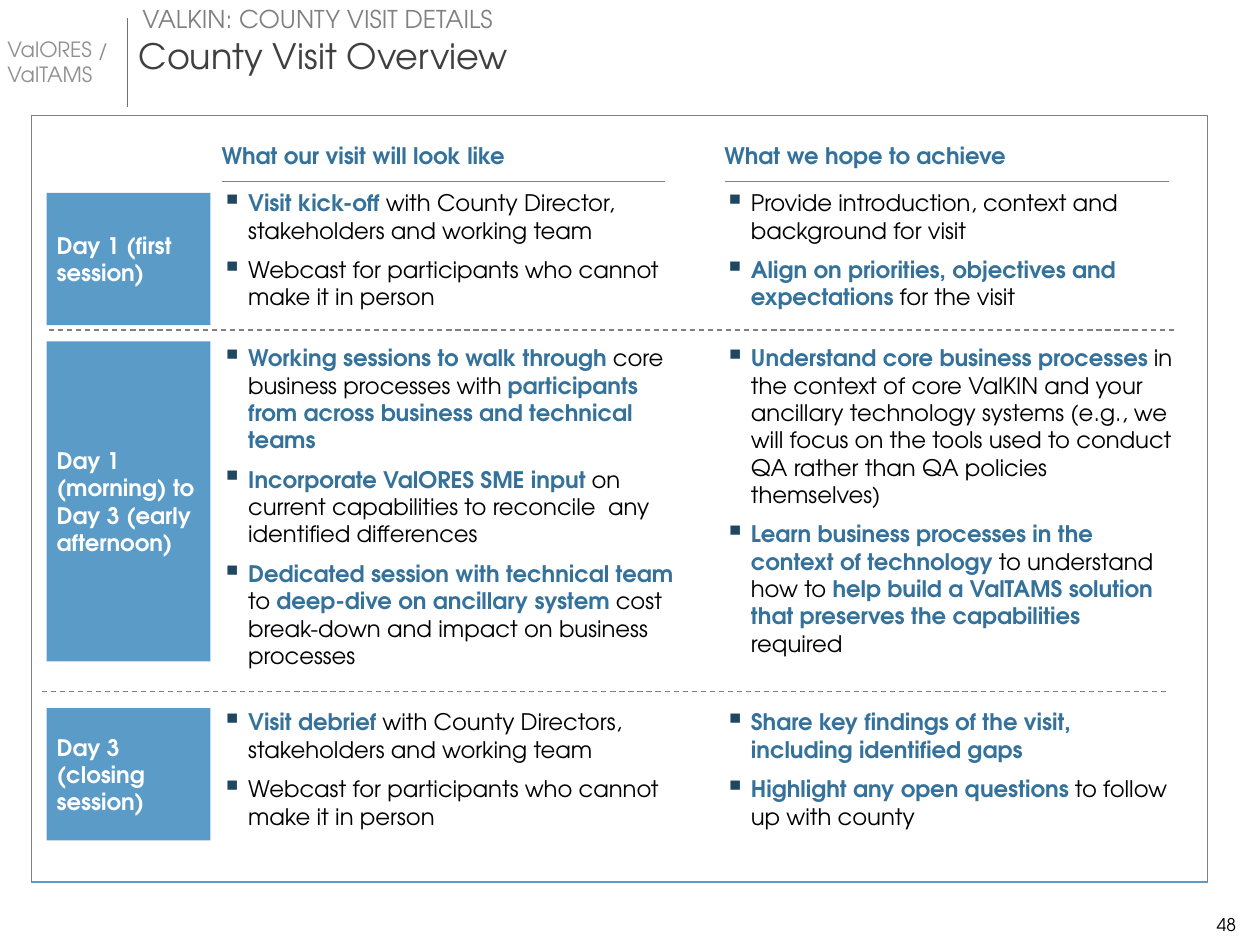
from lxml import etree
from pptx import Presentation
from pptx.dml.color import RGBColor
from pptx.enum.dml import MSO_LINE
from pptx.enum.shapes import MSO_CONNECTOR, MSO_SHAPE
from pptx.enum.text import MSO_ANCHOR, PP_ALIGN
from pptx.oxml.ns import qn
from pptx.util import Inches, Pt

STRAIGHT = MSO_CONNECTOR.STRAIGHT
RECTANGLE = MSO_SHAPE.RECTANGLE
DASH = MSO_LINE.DASH
TOP, MIDDLE, BOTTOM = MSO_ANCHOR.TOP, MSO_ANCHOR.MIDDLE, MSO_ANCHOR.BOTTOM
LEFT, RIGHT = PP_ALIGN.LEFT, PP_ALIGN.RIGHT

FONT = "TeX Gyre Adventor"
BLACK, WHITE, GREY = "000000", "FFFFFF", "808080"
BLUE, ACCENT, BULLET = "5B9BC8", "35729B", "204762"

LABEL_LEFT, LABEL_WIDTH = 0.37, 1.3
COLUMNS = [
    # heading, left, heading width, rule width
    ("What our visit will look like", 1.76, 3.74, 3.52),
    ("What we hope to achieve", 5.75, 3.53, 3.53),
]

# Phrases between asterisks are emphasised.
SESSIONS = [
    {
        "label": "Day 1 (first session)", "label_box": (1.53, 1.05), "inset": 0.08,
        "top": 1.5, "sizes": [(3.68, 1.04), (3.74, 1.04)],
        "columns": [
            ["*Visit kick-off *with County Director, stakeholders and working team",
             "Webcast for participants who cannot make it in person"],
            ["Provide introduction, context and background for visit",
             "*Align on priorities, objectives and expectations* for the visit"],
        ],
    },
    {
        "label": "Day 1 (morning) to Day 3 (early afternoon)",
        "label_box": (2.71, 2.54), "inset": 0.05,
        "top": 2.73, "sizes": [(3.68, 2.63), (3.59, 2.9)],
        "columns": [
            ["*Working sessions to walk through *core business processes with "
             "*participants from across business and technical teams*",
             "*Incorporate ValORES SME input* on current capabilities to reconcile  any "
             "identified differences",
             "*Dedicated session with technical team *to *deep-dive on ancillary system *"
             "cost break-down and impact on business processes"],
            ["*Understand core business processes *in the context of core ValKIN and your "
             "ancillary technology systems (e.g., we will focus on the tools used to "
             "conduct QA rather than QA policies themselves)",
             "*Learn business processes in the context of technology *to understand how to "
             "*help build a ValTAMS solution that preserves the capabilities *required"],
        ],
    },
    {
        "label": "Day 3 (closing session)", "label_box": (5.62, 1.05), "inset": 0,
        "top": 5.62, "sizes": [(3.85, 1.25), (3.59, 1.24)],
        "columns": [
            ["*Visit debrief *with County Directors, stakeholders and working team",
             "Webcast for participants who cannot make it in person"],
            ["*Share key findings of the visit, including identified gaps*",
             "*Highlight any open questions *to follow up with county"],
        ],
    },
]


def rgb(color):
    return RGBColor.from_string(color)


def add_run(paragraph, text, size, color, bold=False):
    run = paragraph.add_run()
    run.text = text
    formats = {"name": FONT, "size": Pt(size), "bold": bold}
    for key, value in formats.items():
        setattr(run.font, key, value)
    run.font.color.rgb = rgb(color)


def set_frame(frame, anchor=TOP, insets=(0, 0, 0, 0), wrap=True):
    """Format a text frame; insets run left, top, right, bottom in inches."""
    formats = {"word_wrap": wrap, "vertical_anchor": anchor}
    sides = ("margin_left", "margin_top", "margin_right", "margin_bottom")
    formats.update(zip(sides, map(Inches, insets)))
    for key, value in formats.items():
        setattr(frame, key, value)


def add_text(slide, box, lines, size, color, bold=False, align=LEFT, **frame_format):
    frame = slide.shapes.add_textbox(*map(Inches, box)).text_frame
    set_frame(frame, **frame_format)
    for index, line in enumerate(lines):
        paragraph = frame.add_paragraph() if index else frame.paragraphs[0]
        paragraph.alignment = align
        add_run(paragraph, line, size, color, bold)


def add_line(slide, start, end, color, width, dash=None):
    line = slide.shapes.add_connector(STRAIGHT, *map(Inches, start + end))
    line.line.color.rgb = rgb(color)
    line.line.width = Pt(width)
    if dash is not None:
        line.line.dash_style = dash
    etree.SubElement(line._element.spPr, qn("a:effectLst"))


def add_rectangle(slide, box, fill):
    rectangle = slide.shapes.add_shape(RECTANGLE, *map(Inches, box))
    rectangle.shadow.inherit = False
    rectangle.fill.solid()
    rectangle.fill.fore_color.rgb = rgb(fill)
    rectangle.line.fill.background()
    return rectangle


def set_bullet(paragraph):
    paragraph.space_after = Pt(7)
    properties = paragraph._p.get_or_add_pPr()
    properties.set("marL", str(Inches(0.21)))
    properties.set("indent", str(-Inches(0.21)))
    color = etree.SubElement(properties, qn("a:buClr"))
    etree.SubElement(color, qn("a:srgbClr"), val=BULLET)
    etree.SubElement(properties, qn("a:buSzPct"), val="125000")
    etree.SubElement(properties, qn("a:buChar"), char="▪")


def add_bullets(slide, box, items):
    frame = slide.shapes.add_textbox(*map(Inches, box)).text_frame
    set_frame(frame)
    for index, item in enumerate(items):
        paragraph = frame.add_paragraph() if index else frame.paragraphs[0]
        set_bullet(paragraph)
        for part, text in enumerate(item.split("*")):
            emphasised = part % 2 == 1
            if text:
                add_run(paragraph, text, 13, ACCENT if emphasised else BLACK, emphasised)


def add_header(slide):
    add_line(slide, (1.01, 0.14), (1.01, 0.85), "767171", 0.5)
    add_text(slide, (-0.04, 0.24, 1.17, 0.5), ["ValORES /", "ValTAMS"], 12, "909090",
             anchor=MIDDLE, insets=(0.1, 0.05, 0.1, 0.05))
    add_text(slide, (1.13, 0.03, 5.56, 0.24), ["VALKIN: COUNTY VISIT DETAILS"], 14, GREY)
    add_text(slide, (1.1, 0.27, 8.24, 0.34), ["County Visit Overview"], 20, "404040")


def add_panel(slide, left, top, width, height):
    panel = add_rectangle(slide, (left, top, width, height), WHITE)
    panel.line.color.rgb = rgb(GREY)
    panel.line.width = Pt(0.5)
    bottom = top + height
    add_line(slide, (left, bottom), (left + width, bottom), BLUE, 1)


def add_column_heading(slide, heading, left, width, rule_width):
    add_text(slide, (left, 1.12, width, 0.22), [heading], 13, ACCENT, bold=True,
             anchor=BOTTOM)
    add_line(slide, (left, 1.44), (left + rule_width, 1.44), GREY, 0.75)


def add_session(slide, session):
    top, height = session["label_box"]
    label = add_rectangle(slide, (LABEL_LEFT, top, LABEL_WIDTH, height), BLUE)
    set_frame(label.text_frame, MIDDLE, (0.08, 0.08, session["inset"], 0.08))
    paragraph = label.text_frame.paragraphs[0]
    paragraph.alignment = LEFT
    add_run(paragraph, session["label"], 13, WHITE, True)
    for column, size, items in zip(COLUMNS, session["sizes"], session["columns"]):
        add_bullets(slide, (column[1], session["top"], *size), items)


def main():
    deck = Presentation()
    deck.slide_width, deck.slide_height = Inches(10), Inches(7.5)
    slide = deck.slides.add_slide(deck.slide_layouts[6])
    add_header(slide)
    add_panel(slide, 0.25, 0.92, 9.33, 6.08)
    for column in COLUMNS:
        add_column_heading(slide, *column)
    for session in SESSIONS:
        add_session(slide, session)
    for left, top in ((0.39, 2.62), (0.33, 5.49)):
        add_line(slide, (left, top), (left + 8.95, top), GREY, 0.75, DASH)
    add_text(slide, (9.64, 7.25, 0.17, 0.17), ["48"], 10, BLACK, align=RIGHT,
             anchor=BOTTOM, wrap=False)
    deck.save("out.pptx")


if __name__ == "__main__":
    main()
